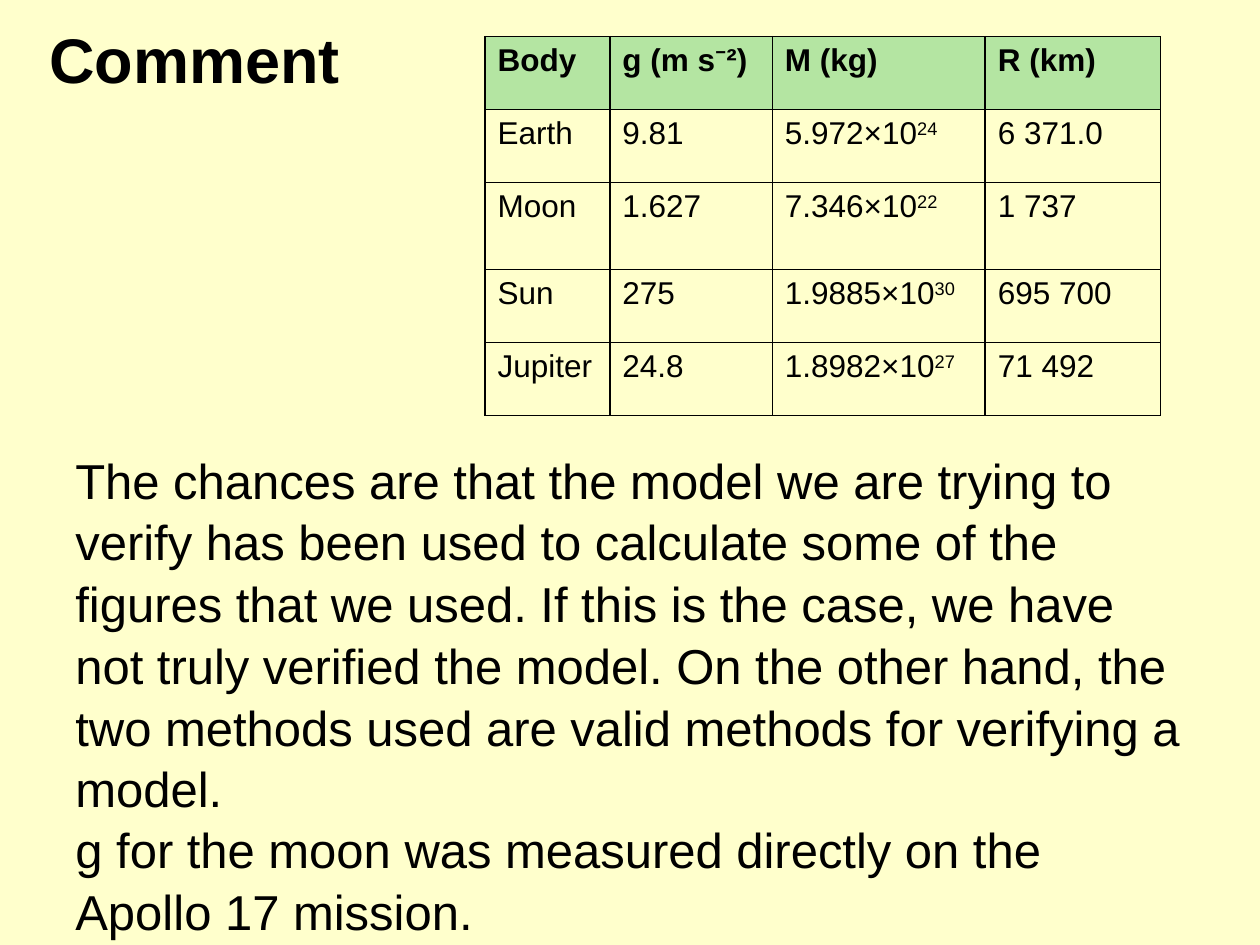
"""Build a comment slide with a table of gravity data and two remarks."""
from lxml import etree
from pptx import Presentation
from pptx import util as u
from pptx.dml.color import RGBColor
from pptx.enum import text
from pptx.oxml import ns

COLORS = {"page": "FFFFCC", "ink": "000000", "head": "B4E5A2"}
HEADER = ["Body", "g (m s⁻²)", "M (kg)", "R (km)"]
BODIES = [
    ["Earth", "9.81", "5.972×10^24", "6 371.0"],
    ["Moon", "1.627", "7.346×10^22", "1 737"],
    ["Sun", "275", "1.9885×10^30", "695 700"],
    ["Jupiter", "24.8", "1.8982×10^27", "71 492"],
]
REMARKS = [
    (3.5, 9, 2.93, "The chances are that the model we are trying to verify has been used "
     "to calculate some of the figures that we used. If this is the case, we have not "
     "truly verified the model. On the other hand, the two methods used are valid "
     "methods for verifying a model."),
    (6.43, 8.71, 1.04, "g for the moon was measured directly on the Apollo 17 mission."),
]


def add_run(p, words, size, bold=False):
    r = p.add_run()
    r.text = words
    for name, value in {"name": "Arial", "size": u.Pt(size), "bold": bold}.items():
        setattr(r.font, name, value)
    r.font.color.rgb = RGBColor.from_string(COLORS["ink"])
    return r


def add_borders(cell):
    tcPr = cell._tc.get_or_add_tcPr()
    for i, side in enumerate(["lnL", "lnR", "lnT", "lnB"]):
        ln = etree.Element(ns.qn(f"a:{side}"), w=str(u.Pt(1)))
        fill = etree.SubElement(ln, ns.qn("a:solidFill"))
        etree.SubElement(fill, ns.qn("a:srgbClr"), val=COLORS["ink"])
        tcPr.insert(i, ln)


prs = Presentation()
prs.slide_width, prs.slide_height = u.Inches(10), u.Inches(7.5)
s = prs.slides.add_slide(prs.slide_layouts[5])
s.background.fill.solid()
s.background.fill.fore_color.rgb = RGBColor.from_string(COLORS["page"])

title = s.shapes.title
box = {"left": 0.29, "top": 0.18, "width": 9.49, "height": 0.65}
for name, value in box.items():
    setattr(title, name, u.Inches(value))
title.text_frame.vertical_anchor = text.MSO_ANCHOR.MIDDLE
p = title.text_frame.paragraphs[0]
p.alignment, p.line_spacing = text.PP_ALIGN.LEFT, 0.9
add_run(p, "Comment", 36, True)

rows = [HEADER] + BODIES
table = s.shapes.add_table(len(rows), len(HEADER), u.Inches(3.85), u.Inches(0.29),
                           u.Inches(5.36), u.Inches(3.01)).table
table.first_row = table.horz_banding = False
for col, width in zip(table.columns, [0.99, 1.29, 1.69, 1.39]):
    col.width = u.Inches(width)
for row, height in zip(table.rows, [0.58, 0.58, 0.69, 0.58, 0.58]):
    row.height = u.Inches(height)

for i, values in enumerate(rows):
    for j, value in enumerate(values):
        cell = table.cell(i, j)
        if i == 0:
            cell.fill.solid()
            cell.fill.fore_color.rgb = RGBColor.from_string(COLORS["head"])
        else:
            cell.fill.background()
        add_borders(cell)
        p = cell.text_frame.paragraphs[0]
        base, _, power = value.partition("^")
        add_run(p, base, 18, i == 0)
        if power:
            add_run(p, power, 18).font._element.set("baseline", "30000")

for top, width, height, words in REMARKS:
    sp = s.shapes.add_textbox(u.Inches(0.5), u.Inches(top), u.Inches(width), u.Inches(height))
    tf = sp.text_frame
    tf.word_wrap = True
    p = tf.paragraphs[0]
    p.line_spacing, p.space_after = 1.05, u.Pt(12)
    add_run(p, words, 28)

prs.save("out.pptx")
